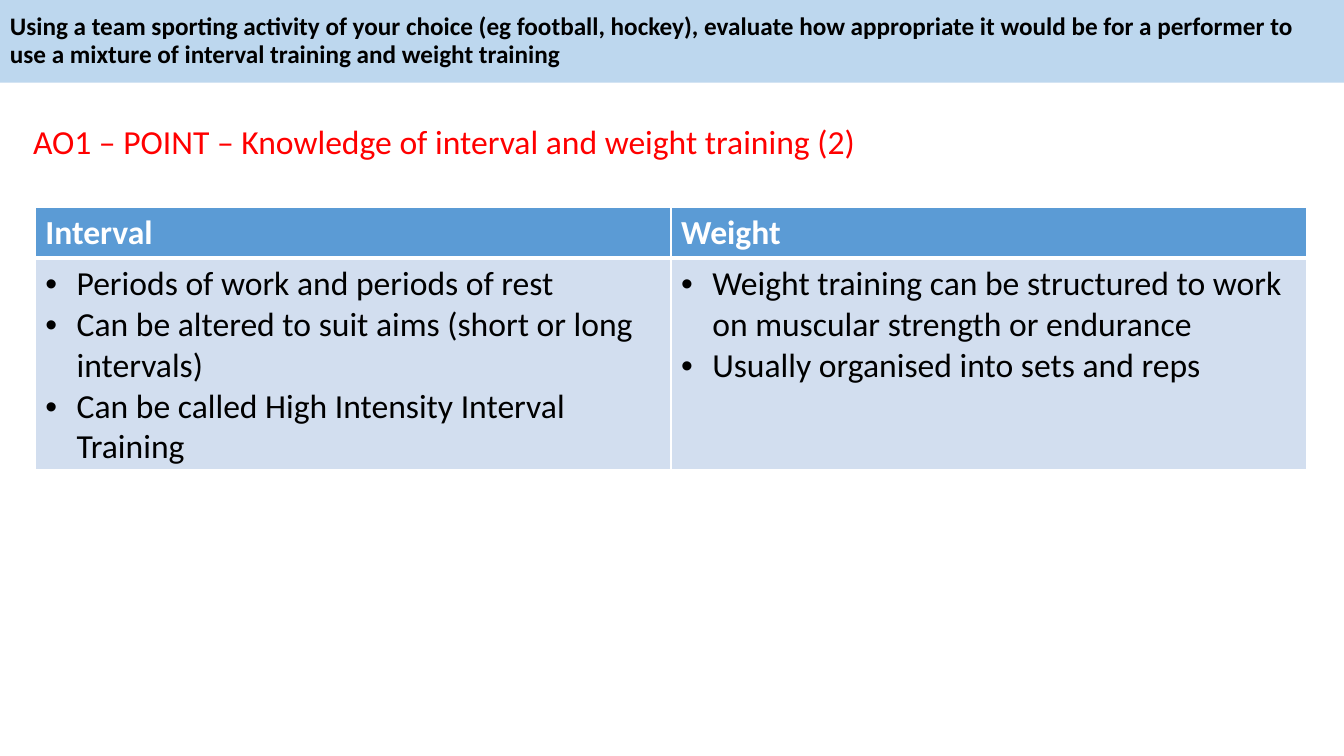
from lxml.etree import SubElement
from pptx import Presentation
from pptx.dml.color import RGBColor
from pptx.enum.shapes import MSO_SHAPE as Shape
from pptx.enum.text import MSO_ANCHOR as Anchor, PP_ALIGN as Align
from pptx.oxml import parse_xml
from pptx.oxml.ns import nsdecls, qn
from pptx.util import Pt

PX = 9144  # 100 px to the inch
PAGE_WIDTH, PAGE_HEIGHT = 1333, 750
BULLET_INDENT = 31
HEADING_HEIGHT = 50

QUESTION = (
    "Using a team sporting activity of your choice (eg football, hockey), "
    "evaluate how appropriate it would be for a performer to use a mixture of "
    "interval training and weight training"
)
POINT = "AO1 – POINT – Knowledge of interval and weight training (2)"
TRAINING = {
    "Interval": [
        "Periods of work and periods of rest",
        "Can be altered to suit aims (short or long intervals)",
        "Can be called High Intensity Interval Training",
    ],
    "Weight": [
        "Weight training can be structured to work on muscular strength or endurance",
        "Usually organised into sets and reps",
    ],
}


def color(value):
    return RGBColor.from_string(value)


def scaled(box):
    return [length * PX for length in box]


def fill_with(item, value):
    item.fill.solid()
    item.fill.fore_color.rgb = color(value)


def write(frame, lines, ink, size=24, bold=False):
    """Put one paragraph per line into a text frame."""
    for index, line in enumerate(lines):
        para = frame.paragraphs[0] if index == 0 else frame.add_paragraph()
        para.alignment = Align.LEFT
        span = para.add_run()
        span.text = line
        for name, value in {"name": "Calibri", "size": Pt(size), "bold": bold}.items():
            setattr(span.font, name, value)
        span.font.color.rgb = color(ink)


def add_bullets(frame):
    for para in frame.paragraphs:
        properties = para._p.get_or_add_pPr()
        properties.set("marL", str(BULLET_INDENT * PX))
        properties.set("indent", str(-BULLET_INDENT * PX))
        SubElement(properties, qn("a:buFont")).set("typeface", "Arial")
        SubElement(properties, qn("a:buChar")).set("char", "•")


def add_borders(cell, widths):
    """Draw white borders, given as points per side."""
    properties = cell._tc.get_or_add_tcPr()
    for index, (side, points) in enumerate(widths.items()):
        line = parse_xml(
            f'<a:ln{side} {nsdecls("a")} w="{Pt(points)}"><a:solidFill>'
            f'<a:srgbClr val="FFFFFF"/></a:solidFill></a:ln{side}>'
        )
        properties.insert(index, line)


# Question banner across the top
def question_banner(page, box):
    banner = page.shapes.add_shape(Shape.RECTANGLE, *scaled(box))
    banner.shadow.inherit = False
    fill_with(banner, "BDD7EE")
    banner.line.fill.background()
    frame = banner.text_frame
    frame.word_wrap = True
    frame.vertical_anchor = Anchor.MIDDLE
    write(frame, [QUESTION], "000000", size=18, bold=True)
    frame.paragraphs[0].line_spacing = 0.9


# Red point line
def point_line(page, box):
    frame = page.shapes.add_textbox(*scaled(box)).text_frame
    frame.word_wrap = True
    write(frame, [POINT], "FF0000")


# Table comparing the two training types
def training_table(page, box):
    table = page.shapes.add_table(2, len(TRAINING), *scaled(box)).table
    table.rows[0].height = HEADING_HEIGHT * PX
    table.rows[1].height = (box[3] - HEADING_HEIGHT) * PX
    for column, (heading, facts) in enumerate(TRAINING.items()):
        top, body = table.cell(0, column), table.cell(1, column)
        fill_with(top, "5B9BD5")
        write(top.text_frame, [heading], "FFFFFF", bold=True)
        add_borders(top, {"L": 1, "R": 1, "T": 1, "B": 3})
        fill_with(body, "D2DEEF")
        write(body.text_frame, facts, "000000")
        add_bullets(body.text_frame)
        add_borders(body, {"L": 1, "R": 1, "T": 3, "B": 1})


def main():
    deck = Presentation()
    deck.slide_width, deck.slide_height = scaled((PAGE_WIDTH, PAGE_HEIGHT))
    page = deck.slides.add_slide(deck.slide_layouts[6])
    question_banner(page, (0, 0, PAGE_WIDTH, 82))
    point_line(page, (23, 115, 1227, 50))
    training_table(page, (35, 206, 1261, 260))
    deck.save("out.pptx")


if __name__ == "__main__":
    main()
